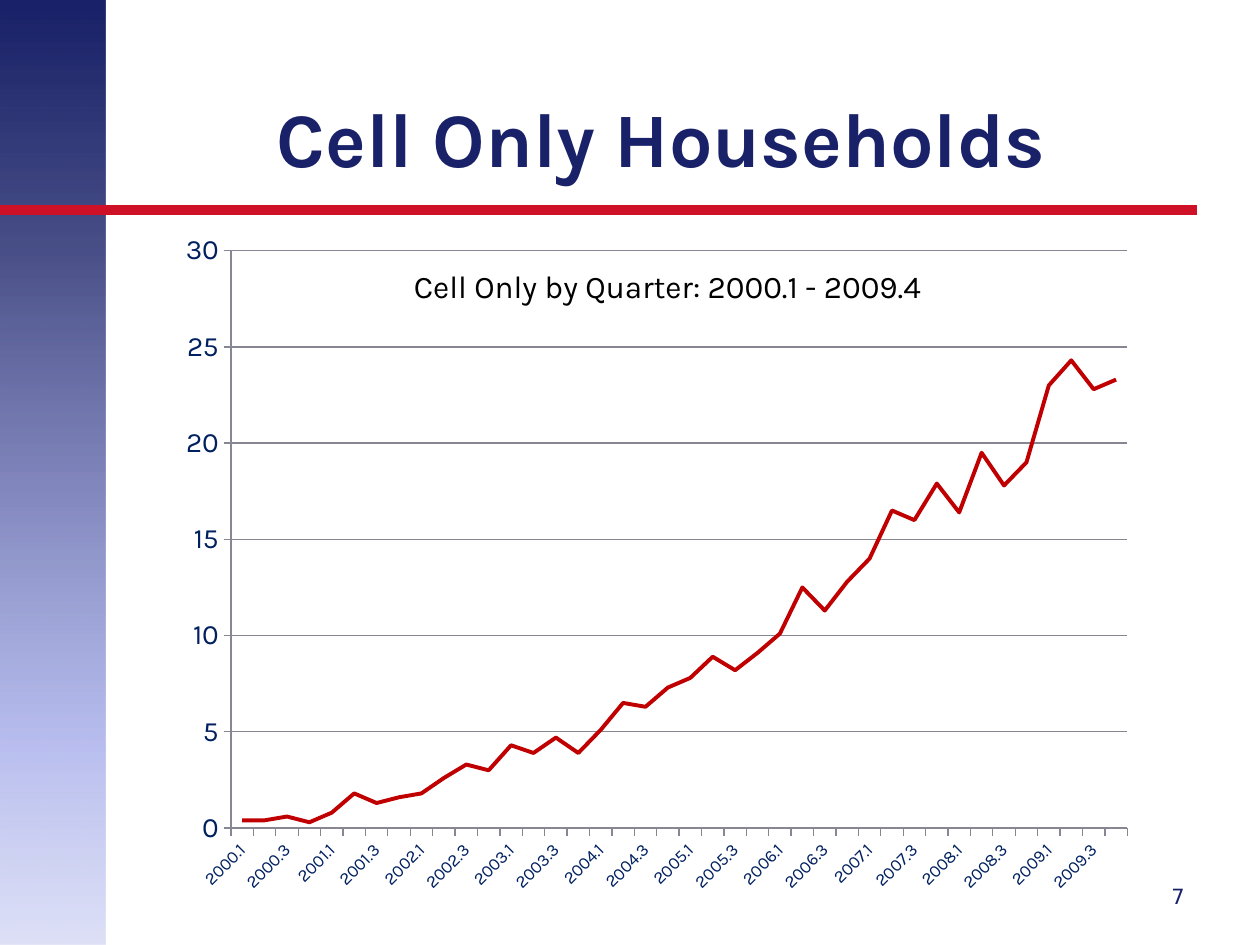
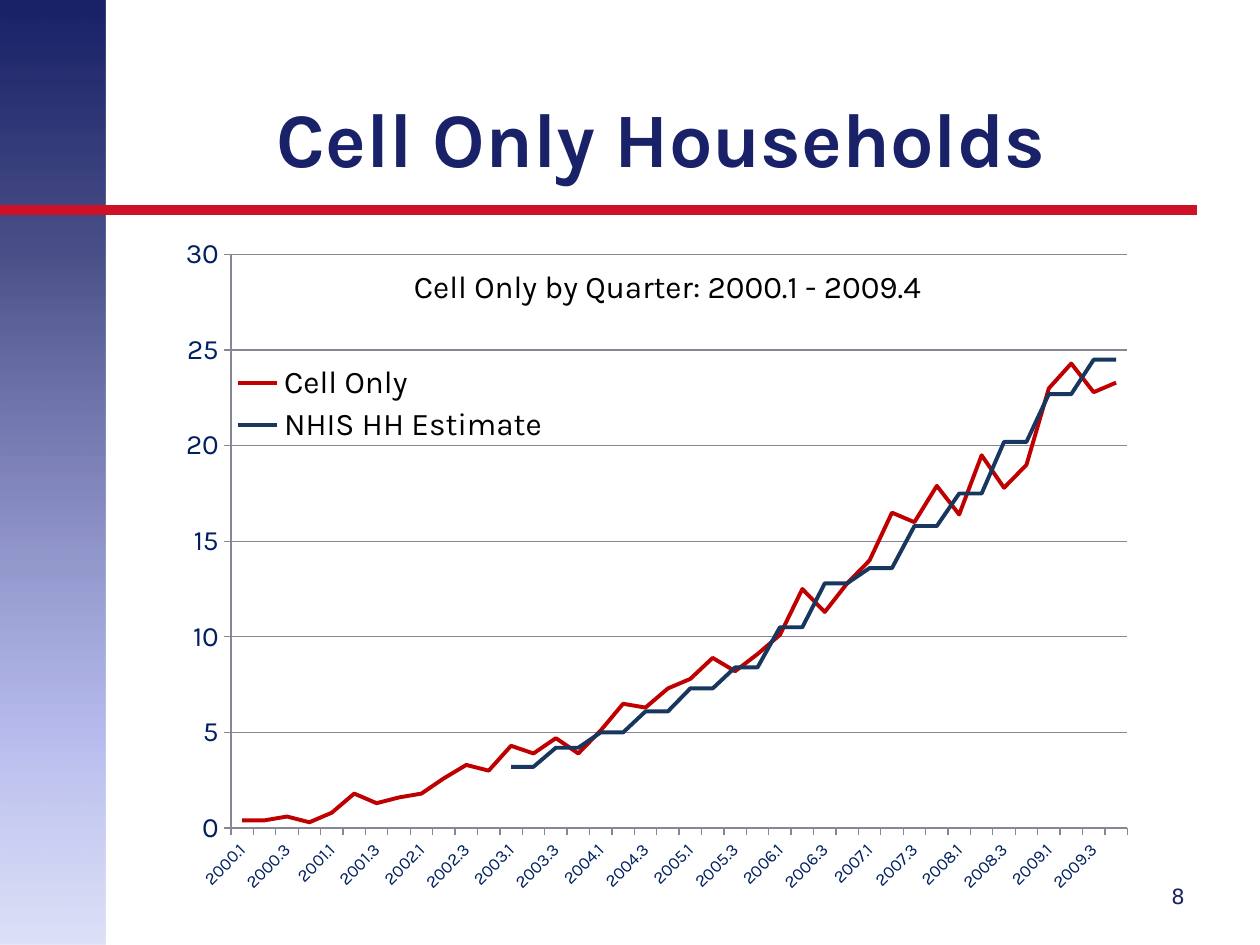
from lxml.etree import SubElement
from pptx import Presentation
from pptx.chart.data import CategoryChartData
from pptx.dml.color import RGBColor
from pptx.enum.chart import XL_CHART_TYPE, XL_LEGEND_POSITION, XL_TICK_MARK
from pptx.enum.shapes import MSO_CONNECTOR, MSO_SHAPE
from pptx.enum.text import MSO_ANCHOR, MSO_AUTO_SIZE, PP_ALIGN
from pptx.oxml import parse_xml
from pptx.oxml.ns import nsdecls, qn
from pptx.util import Emu, Pt

EMU_PER_PX = 9525
SLIDE_WIDTH, SLIDE_HEIGHT = 960, 720
TITLE_ONLY = 5
CHART_LEFT, CHART_WIDTH = 72, 808
CHART_TITLE_TOP, PLOT_BOTTOM = 198, 631  # the same on every slide
COLORS = {
    "navy": "192168",
    "red": "CE1126",
    "axis_text": "002060",
    "grid": "878794",
    "black": "000000",
    "cell_only": "C00000",
    "estimate": "17375E",
}
# position %, color, opacity %
BAND_STOPS = [(0, "192168", 100), (26, "192168", 79), (78, "969EE6", 68), (100, "CACEF2", 61)]

QUARTERS = [f"{year}.{quarter}" for year in range(2000, 2010) for quarter in range(1, 5)]
CELL_ONLY = [
    0.4, 0.4, 0.6, 0.3, 0.8, 1.8, 1.3, 1.6, 1.8, 2.6,
    3.3, 3, 4.3, 3.9, 4.7, 3.9, 5.1, 6.5, 6.3, 7.3,
    7.8, 8.9, 8.2, 9.1, 10.1, 12.5, 11.3, 12.8, 14, 16.5,
    16, 17.9, 16.4, 19.5, 17.8, 19, 23, 24.3, 22.8, 23.3,
]
# The estimate starts in 2003 and is published once per half year.
HALF_YEAR_ESTIMATES = [3.2, 4.2, 5, 6.1, 7.3, 8.4, 10.5, 12.8, 13.6, 15.8, 17.5, 20.2, 22.7, 24.5]
ESTIMATE = [None] * 12 + [value for value in HALF_YEAR_ESTIMATES for _ in range(2)]


def px(length):
    return Emu(length * EMU_PER_PX)


def rgb(name):
    return RGBColor.from_string(COLORS[name])


def set_font(font, size, color, name="Karla", bold=False):
    font.name, font.size, font.bold = name, Pt(size), bold
    font.color.rgb = rgb(color)


def set_layout(element, index, chart_height, **lengths):
    """Place a chart part by px lengths inside the chart's frame."""
    for old_layout in element.findall(qn("c:layout")):
        element.remove(old_layout)
    layout = parse_xml(f"<c:layout {nsdecls('c')}/>")
    manual = SubElement(layout, qn("c:manualLayout"))
    if element.tag == qn("c:plotArea"):
        SubElement(manual, qn("c:layoutTarget"), val="inner")
    for side in "xy":
        SubElement(manual, qn(f"c:{side}Mode"), val="edge")
    for side, length in lengths.items():
        whole = CHART_WIDTH if side in "xw" else chart_height
        SubElement(manual, qn(f"c:{side}"), val=str(length / whole))
    element.insert(index, layout)


class Deck:
    """Holds the shared style and the slide being built."""

    def __init__(self):
        self.presentation = Presentation()
        self.presentation.slide_width = px(SLIDE_WIDTH)
        self.presentation.slide_height = px(SLIDE_HEIGHT)
        self.slide = None

    def add_slide(self, title, number):
        self.slide = self.presentation.slides.add_slide(self.presentation.slide_layouts[TITLE_ONLY])
        self.add_band()
        self.add_rule()
        self.set_title(title)
        self.add_number(number)

    def add_band(self):
        band = self.slide.shapes.add_shape(MSO_SHAPE.RECTANGLE, 0, 0, px(80), px(SLIDE_HEIGHT))
        band.shadow.inherit = False
        band.line.fill.background()
        band.fill.gradient()
        gradient = band.element.spPr.find(qn("a:gradFill"))
        stops = "".join(
            f'<a:gs pos="{position * 1000}"><a:srgbClr val="{color}">'
            f'<a:alpha val="{opacity * 1000}"/></a:srgbClr></a:gs>'
            for position, color, opacity in BAND_STOPS
        )
        gradient.getparent().replace(gradient, parse_xml(
            f'<a:gradFill {nsdecls("a")} rotWithShape="1"><a:gsLst>{stops}</a:gsLst>'
            '<a:lin ang="5400000" scaled="0"/></a:gradFill>'
        ))

    def add_rule(self):
        rule = self.slide.shapes.add_connector(MSO_CONNECTOR.STRAIGHT, 0, px(160), px(912), px(160))
        rule.line.color.rgb = rgb("red")
        rule.line.width = Pt(6)
        SubElement(rule.element.spPr, qn("a:effectLst"))

    def set_title(self, text):
        title = self.slide.shapes.title
        title.left, title.top, title.width, title.height = map(px, (96, 29, 816, 115))
        frame = title.text_frame
        frame.text = text
        frame.auto_size = MSO_AUTO_SIZE.NONE
        frame.vertical_anchor = MSO_ANCHOR.BOTTOM
        paragraph = frame.paragraphs[0]
        paragraph.alignment = PP_ALIGN.CENTER
        set_font(paragraph.font, 44, "navy", bold=True)

    def add_number(self, number):
        frame = self.slide.shapes.add_textbox(*map(px, (840, 664, 72, 38))).text_frame
        frame.text = str(number)
        frame.word_wrap = True
        frame.vertical_anchor = MSO_ANCHOR.MIDDLE
        paragraph = frame.paragraphs[0]
        paragraph.alignment = PP_ALIGN.RIGHT
        set_font(paragraph.font, 12, "navy", name="DejaVu Sans")

    def add_line_chart(self, title, series_list, top, height, legend=False):
        """Draw series given as (name, values, color)."""
        data = CategoryChartData()
        data.categories = QUARTERS
        for name, values, _ in series_list:
            data.add_series(name, values)
        chart = self.slide.shapes.add_chart(
            XL_CHART_TYPE.LINE, px(CHART_LEFT), px(top), px(CHART_WIDTH), px(height), data
        ).chart
        set_font(chart.font, 10, "axis_text")
        plot = chart.plots[0]
        plot.vary_by_categories = False
        for series, (_, _, color) in zip(plot.series, series_list):
            series.smooth = False
            series.format.line.color.rgb = rgb(color)
            series.format.line.width = Pt(2.25)
        self.format_axes(chart)
        self.set_chart_title(chart, title, top, height)
        chart.has_legend = legend
        if legend:
            self.format_legend(chart, height)
        plot_area = chart.element.find(".//" + qn("c:plotArea"))
        set_layout(plot_area, 0, height, x=104, y=15, w=683, h=PLOT_BOTTOM - top - 15)

    def format_axes(self, chart):
        values, categories = chart.value_axis, chart.category_axis
        for axis, size in ((values, 16), (categories, 10)):
            axis.major_tick_mark = XL_TICK_MARK.OUTSIDE
            axis.format.line.color.rgb = rgb("grid")
            set_font(axis.tick_labels.font, size, "axis_text")
        values.minimum_scale, values.maximum_scale, values.major_unit = 0, 30, 5
        values.major_gridlines.format.line.color.rgb = rgb("grid")
        label_body = chart.element.find(f".//{qn('c:catAx')}/{qn('c:txPr')}/{qn('a:bodyPr')}")
        label_body.set("rot", "-2700000")

    def set_chart_title(self, chart, text, chart_top, chart_height):
        frame = chart.chart_title.text_frame
        frame.text = text
        set_font(frame.paragraphs[0].font, 18, "black")
        element = chart.element.find(".//" + qn("c:title"))
        set_layout(element, 1, chart_height, x=239, y=CHART_TITLE_TOP - chart_top)
        element.find(qn("c:overlay")).set("val", "1")

    def format_legend(self, chart, chart_height):
        chart.legend.position = XL_LEGEND_POSITION.LEFT
        chart.legend.include_in_layout = True
        set_font(chart.legend.font, 18, "black")
        element = chart.element.find(".//" + qn("c:legend"))
        set_layout(element, 1, chart_height, x=100, y=95, w=250, h=68)


def main():
    deck = Deck()
    title = "Cell Only Households"
    chart_title = "Cell Only by Quarter: 2000.1 - 2009.4"
    cell_only = ("Cell Only", CELL_ONLY, "cell_only")
    estimate = ("NHIS HH Estimate", ESTIMATE, "estimate")

    deck.add_slide(title, 7)
    deck.add_line_chart(chart_title, [("Series 1", *cell_only[1:])], top=176, height=521)

    deck.add_slide(title, 8)
    deck.add_line_chart(chart_title, [cell_only, estimate], top=179, height=520, legend=True)

    deck.presentation.save("out.pptx")


if __name__ == "__main__":
    main()
